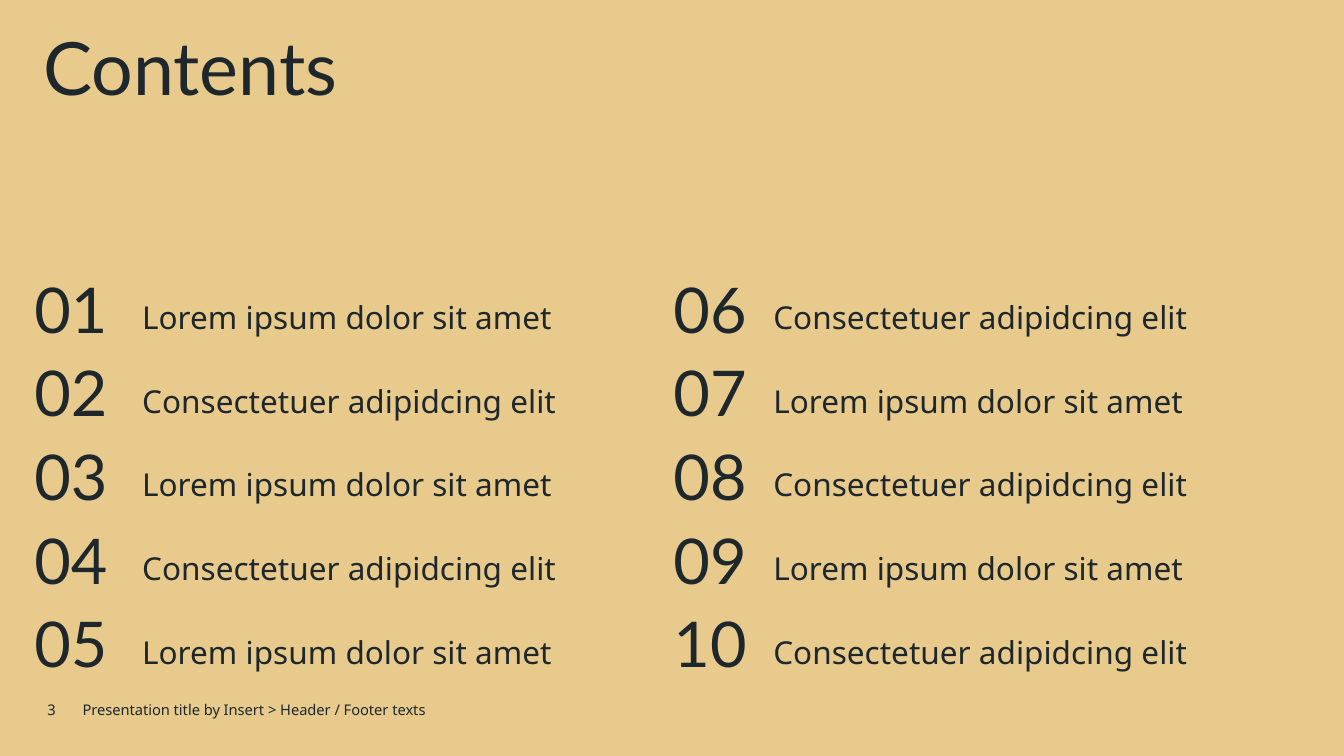
from dataclasses import dataclass

from pptx import Presentation
from pptx import util as u
from pptx.dml import color
from pptx.enum import text
from pptx.oxml import ns
from pptx.slide import Slide
from pptx.table import _Cell as Cell
from pptx.text.text import TextFrame


@dataclass(frozen=True)
class Theme:
    background: str = "E7CA8C"
    ink: str = "1E272C"
    heading_font: str = "Lato"
    body_font: str = "Noto Sans"
    title_size: float = 52.5
    number_size: float = 45
    item_size: float = 22.5
    footer_size: float = 10.5


@dataclass(frozen=True)
class FooterPart:
    words: str
    left: float
    width: float
    align: text.PP_ALIGN


THEME = Theme()
NO_STYLE_NO_GRID = "{2D5ABB26-0587-4C30-8999-92F81FD0307C}"

ITEMS = ("Lorem ipsum dolor sit amet", "Consectetuer adipidcing elit")
ROW_COUNT = 5
ROW_HEIGHT = 0.83
COLUMN_WIDTHS = (1.07, 5.27, 0.99, 5.35)

FOOTER_TOP, FOOTER_HEIGHT = 6.84, 0.4
FOOTER_PARTS = (
    FooterPart("Presentation title by Insert > Header / Footer texts",
               0.72, 10.91, text.PP_ALIGN.LEFT),
    FooterPart("3", 0, 0.65, text.PP_ALIGN.RIGHT),
)


def write(frame: TextFrame, words: str, *, size: float,
          font: str = THEME.body_font,
          align: text.PP_ALIGN = text.PP_ALIGN.LEFT,
          line_spacing: float = 1.0) -> None:
    """Put one formatted paragraph in a text frame."""
    para = frame.paragraphs[0]
    para.alignment = align
    para.line_spacing = line_spacing
    span = para.add_run()
    span.text = words
    span.font.name = font
    span.font.size = u.Pt(size)
    span.font.color.rgb = color.RGBColor.from_string(THEME.ink)


def add_title(page: Slide, words: str) -> None:
    title = page.shapes.title
    title.left, title.top = u.Inches(0.33), u.Inches(0.3)
    title.width, title.height = u.Inches(12.68), u.Inches(1.53)
    frame = title.text_frame
    frame.auto_size = text.MSO_AUTO_SIZE.NONE
    frame.vertical_anchor = text.MSO_ANCHOR.TOP
    write(frame, words, size=THEME.title_size, font=THEME.heading_font,
          line_spacing=0.85)


def fill_cell(cell: Cell, words: str, *, size: float, font: str,
              anchor: text.MSO_ANCHOR, bottom: float = 0) -> None:
    cell.margin_left = cell.margin_right = cell.margin_top = 0
    cell.margin_bottom = u.Inches(bottom)
    cell.vertical_anchor = anchor
    cell.fill.background()
    write(cell.text_frame, words, size=size, font=font)


def add_contents(page: Slide) -> None:
    holder = page.shapes.add_table(
        ROW_COUNT, len(COLUMN_WIDTHS), u.Inches(0.34), u.Inches(2.69),
        u.Inches(sum(COLUMN_WIDTHS)), u.Inches(ROW_COUNT * ROW_HEIGHT))
    table = holder.table
    table.first_row = table.horz_banding = False
    for style in holder.element.iter(ns.qn("a:tableStyleId")):
        style.text = NO_STYLE_NO_GRID
    for column, width in zip(table.columns, COLUMN_WIDTHS):
        column.width = u.Inches(width)

    # Two halves of number and item; the items alternate down the list
    for index in range(2 * ROW_COUNT):
        half, row = divmod(index, ROW_COUNT)
        fill_cell(table.cell(row, 2 * half), f"{index + 1:02d}",
                  size=THEME.number_size, font=THEME.heading_font,
                  anchor=text.MSO_ANCHOR.TOP)
        fill_cell(table.cell(row, 2 * half + 1), ITEMS[index % len(ITEMS)],
                  size=THEME.item_size, font=THEME.body_font,
                  anchor=text.MSO_ANCHOR.BOTTOM, bottom=0.16)


def add_footer(page: Slide, part: FooterPart) -> None:
    box = page.shapes.add_textbox(
        u.Inches(part.left), u.Inches(FOOTER_TOP),
        u.Inches(part.width), u.Inches(FOOTER_HEIGHT))
    box.text_frame.word_wrap = True
    box.text_frame.vertical_anchor = text.MSO_ANCHOR.MIDDLE
    write(box.text_frame, part.words, size=THEME.footer_size, align=part.align)


def main() -> None:
    deck = Presentation()
    deck.slide_width, deck.slide_height = u.Inches(13.33), u.Inches(7.5)
    page = deck.slides.add_slide(deck.slide_layouts.get_by_name("Title Only"))

    # Background
    page.background.fill.solid()
    page.background.fill.fore_color.rgb = color.RGBColor.from_string(
        THEME.background)

    # Title, contents and footer
    add_title(page, "Contents")
    add_contents(page)
    for part in FOOTER_PARTS:
        add_footer(page, part)

    deck.save("out.pptx")


if __name__ == "__main__":
    main()
